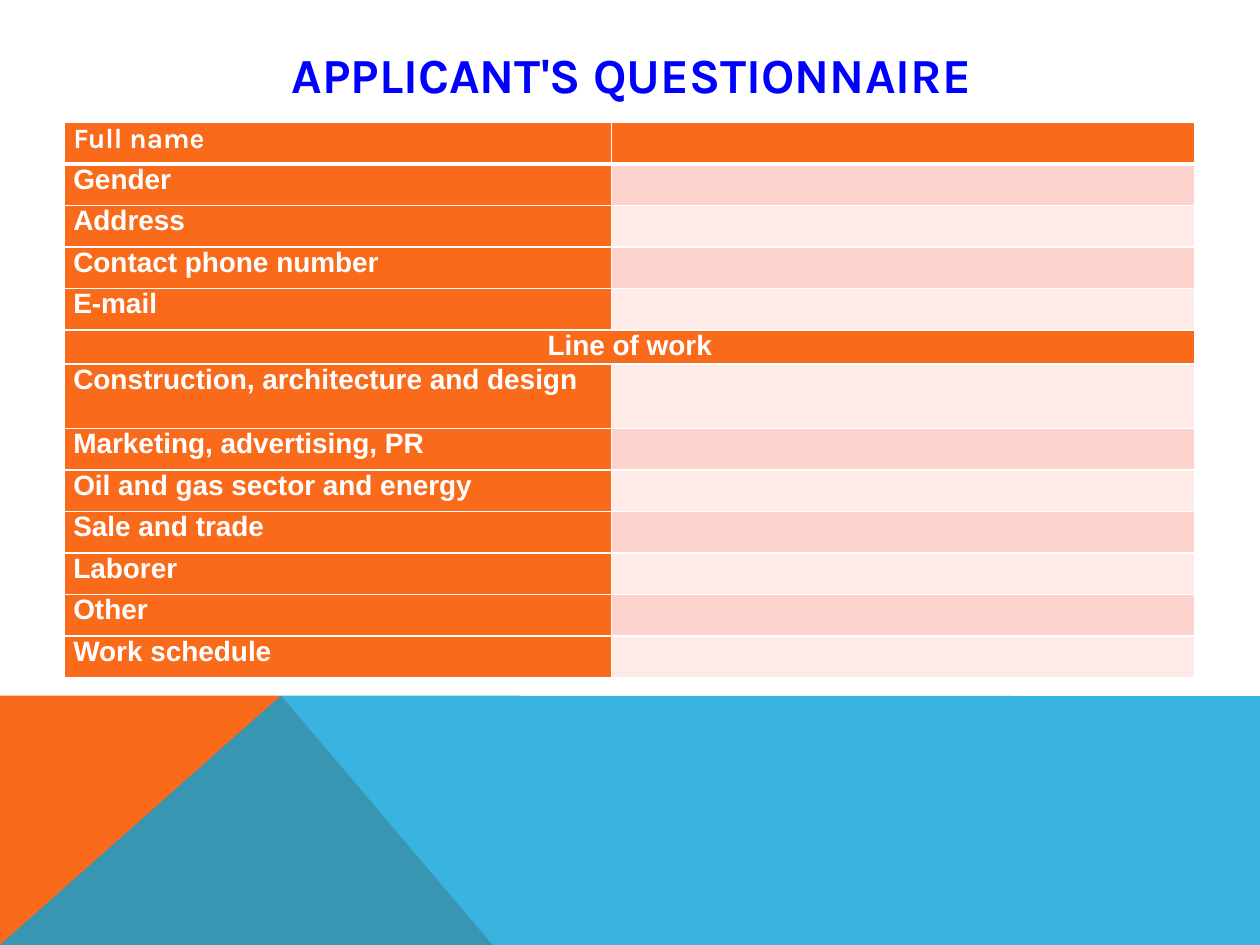
"""Build the applicant's questionnaire slide."""
from dataclasses import dataclass

from lxml.etree import SubElement
from pptx import Presentation
from pptx.dml.color import RGBColor
from pptx.enum.text import MSO_ANCHOR, PP_ALIGN
from pptx.oxml.ns import qn
from pptx.util import Pt


@dataclass(frozen=True)
class Theme:
    """Colours, fonts and type sizes of the slide."""
    white: str = "FFFFFF"
    orange: str = "F96A1B"
    sky: str = "08A1D9"
    blue: str = "0000FF"
    dark_band: str = "FDD4CD"
    light_band: str = "FEEBE8"
    display: str = "Karla"
    body: str = "Arial"
    title_size: int = 28
    cell_size: int = 16


def write(para, text, color, **formats):
    """Add a bold run with the given font formats."""
    span = para.add_run()
    span.text = text
    for name, value in {"bold": True, **formats}.items():
        setattr(span.font, name, value)
    span.font.color.rgb = RGBColor.from_string(color)


def add_border(cell, side, width, color):
    """Draw one side of a cell."""
    line = SubElement(cell._tc.get_or_add_tcPr(), qn(f"a:ln{side}"), w=str(Pt(width)))
    fill = SubElement(line, qn("a:solidFill"))
    SubElement(fill, qn("a:srgbClr"), val=color)


theme = Theme()
deck = Presentation()
deck.slide_width, deck.slide_height = Pt(720), Pt(540)
page = deck.slides.add_slide(deck.slide_layouts[5])

wedges = [
    ([(0, 540), (0, 397.5), (160.6, 397.5), (281.5, 540)], theme.orange, 100),
    ([(0, 540), (160.6, 397.5), (720, 397.8), (720, 540)], theme.sky, 80),
]
for corners, color, opacity in wedges:
    start, *others = [(Pt(x), Pt(y)) for x, y in corners]
    builder = page.shapes.build_freeform(*start)
    builder.add_line_segments(others, close=True)
    wedge = builder.convert_to_shape()
    wedge.shadow.inherit = False
    wedge.line.fill.background()
    wedge.fill.solid()
    wedge.fill.fore_color.rgb = RGBColor.from_string(color)
    if opacity < 100:
        tint = wedge._element.spPr.find(".//" + qn("a:srgbClr"))
        SubElement(tint, qn("a:alpha"), val=str(opacity * 1000))

title = page.shapes.title
title_place = {"left": 64.8, "top": 20.9, "width": 591.8, "height": 43.2}
for name, value in title_place.items():
    setattr(title, name, Pt(value))
title.text_frame.vertical_anchor = MSO_ANCHOR.MIDDLE
title_para = title.text_frame.paragraphs[0]
title_para.alignment = PP_ALIGN.CENTER
write(title_para, "APPLICANT'S QUESTIONNAIRE", theme.blue,
      name=theme.display, size=Pt(theme.title_size))

labels = [
    "Full name", "Gender", "Address", "Contact phone number", "E-mail",
    "Line of work", "Construction, architecture and design",
    "Marketing, advertising, PR", "Oil and gas sector and energy",
    "Sale and trade", "Laborer", "Other", "Work schedule",
]
section_row = labels.index("Line of work")
row_heights = {section_row: 19.6, section_row + 1: 36.8}
column_widths = [312.5, 333.5]
cell_margins = {"margin_left": 5, "margin_right": 5, "margin_top": 0, "margin_bottom": 0}

table = page.shapes.add_table(len(labels), 2, Pt(36.9), Pt(70), Pt(646), Pt(317)).table
for column, width in zip(table.columns, column_widths):
    column.width = Pt(width)

for index, label in enumerate(labels):
    table.rows[index].height = Pt(row_heights.get(index, 23.7))
    band = theme.dark_band if index % 2 else theme.light_band
    answer_fill = theme.orange if index in (0, section_row) else band
    for cell, color in zip(table.rows[index].cells, (theme.orange, answer_fill)):
        for name, value in cell_margins.items():
            setattr(cell, name, Pt(value))
        for side in "LRTB":
            thick = (index, side) in ((0, "B"), (1, "T"))
            add_border(cell, side, 3 if thick else 1, theme.white)
        cell.fill.solid()
        cell.fill.fore_color.rgb = RGBColor.from_string(color)
    label_cell, answer_cell = table.rows[index].cells
    write(label_cell.text_frame.paragraphs[0], label, theme.white,
          name=theme.body if index else theme.display, size=Pt(theme.cell_size))
    SubElement(answer_cell.text_frame.paragraphs[0]._p, qn("a:endParaRPr"),
               sz=str(theme.cell_size * 100))

section = table.cell(section_row, 0)
section.merge(table.cell(section_row, 1))
section.text_frame.paragraphs[0].alignment = PP_ALIGN.CENTER

deck.save("out.pptx")
